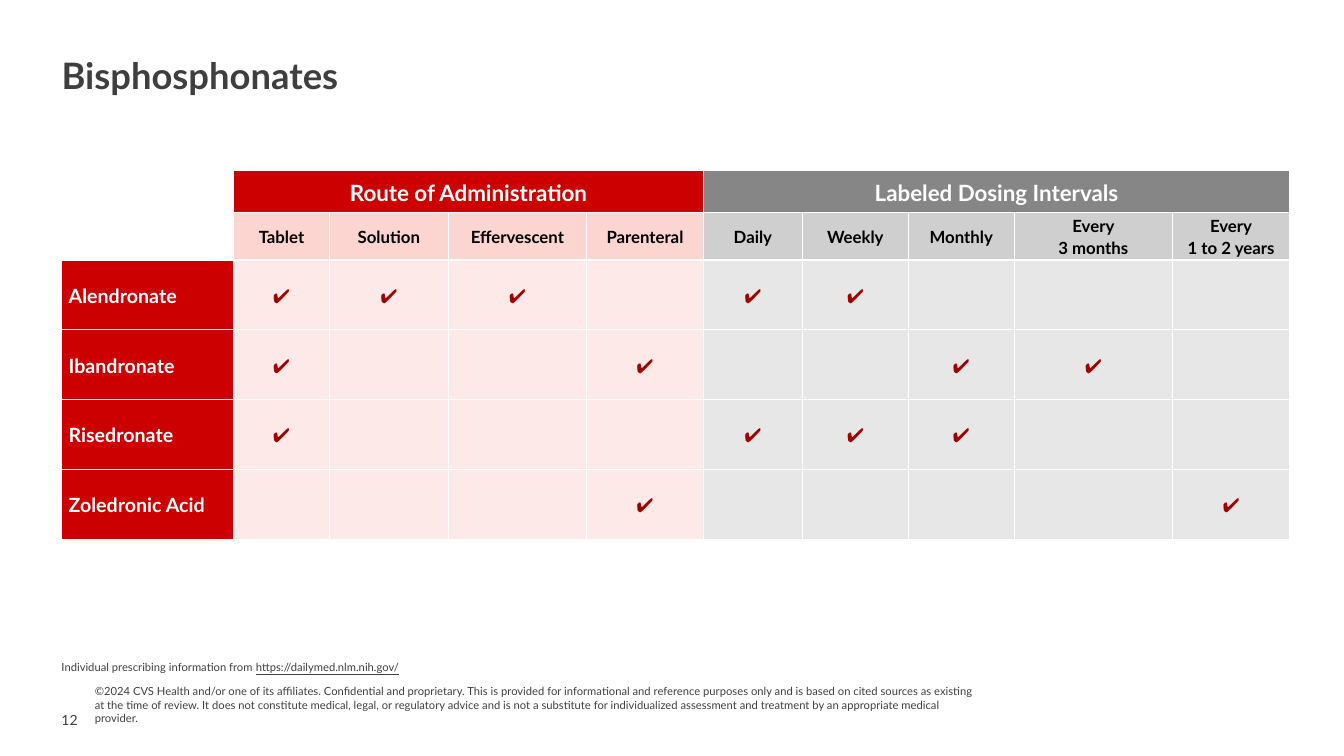
"""Build the bisphosphonates slide with its routes and dosing intervals table."""
from dataclasses import dataclass

import lxml.etree
import pptx
import pptx.dml.color
import pptx.enum.text
import pptx.oxml
import pptx.oxml.ns
import pptx.util

Cm = pptx.util.Cm
Pt = pptx.util.Pt
ANCHOR = pptx.enum.text.MSO_ANCHOR
ALIGN = pptx.enum.text.PP_ALIGN


@dataclass(frozen=True)
class Theme:
    font: str = "Lato"
    text: str = "3F3F3F"
    black: str = "000000"
    white: str = "FFFFFF"
    red: str = "CC0000"
    check: str = "9E0000"
    gray: str = "868686"
    route_head: str = "FCD5D1"
    route_cell: str = "FDEAE8"
    dosing_head: str = "CFCFCF"
    dosing_cell: str = "E7E7E7"
    title_size: int = 26
    group_size: int = 16
    drug_size: int = 14
    head_size: int = 12
    number_size: int = 10
    note_size: int = 8


ROUTES = ["Tablet", "Solution", "Effervescent", "Parenteral"]
INTERVALS = ["Daily", "Weekly", "Monthly", "Every\v3 months", "Every\v1 to 2 years"]
DRUGS = {
    "Alendronate": {"Tablet", "Solution", "Effervescent", "Daily", "Weekly"},
    "Ibandronate": {"Tablet", "Parenteral", "Monthly", "Every\v3 months"},
    "Risedronate": {"Tablet", "Daily", "Weekly", "Monthly"},
    "Zoledronic Acid": {"Parenteral", "Every\v1 to 2 years"},
}
COL_WIDTHS = [4.34, 2.41, 3, 3.48, 2.95, 2.49, 2.67, 2.67, 3.99, 2.95]
ROW_HEIGHTS = [1.07, 1.19] + [1.76] * len(DRUGS)
DISCLAIMER = (
    "©2024 CVS Health and/or one of its affiliates. Confidential and proprietary. "
    "This is provided for informational and reference purposes only and is based on "
    "cited sources as existing at the time of review. It does not constitute medical, "
    "legal, or regulatory advice and is not a substitute for individualized assessment "
    "and treatment by an appropriate medical provider."
)


class Deck:
    def __init__(self, theme):
        self.theme = theme
        self.prs = pptx.Presentation()
        self.prs.slide_width, self.prs.slide_height = Cm(33.87), Cm(19.05)
        self.s = self.prs.slides.add_slide(self.prs.slide_layouts[5])

    def style(self, p, size, color, bold=False):
        for r in p.runs:
            r.font.name = self.theme.font
            r.font.size = Pt(size)
            r.font.bold = bold
            r.font.color.rgb = pptx.dml.color.RGBColor.from_string(color)

    def frame(self, tf, anchor):
        tf.word_wrap = True
        tf.auto_size = pptx.enum.text.MSO_AUTO_SIZE.NONE
        tf.vertical_anchor = anchor
        tf.margin_left = tf.margin_right = tf.margin_top = tf.margin_bottom = 0

    def title(self, text, left, top, width, height):
        sp = self.s.shapes.title
        sp.left, sp.top, sp.width, sp.height = map(Cm, (left, top, width, height))
        self.frame(sp.text_frame, ANCHOR.TOP)
        sp.text_frame.text = text
        p = sp.text_frame.paragraphs[0]
        p.alignment = ALIGN.LEFT
        p.line_spacing = 0.9
        self.style(p, self.theme.title_size, self.theme.text, True)

    def text(self, text, left, top, width, height, size, anchor=ANCHOR.BOTTOM, address=""):
        sp = self.s.shapes.add_textbox(*map(Cm, (left, top, width, height)))
        self.frame(sp.text_frame, anchor)
        p = sp.text_frame.paragraphs[0]
        p.text = text
        if address:
            r = p.add_run()
            r.text = address
            r.font.underline = True
        self.style(p, size, self.theme.text)

    def table(self, left, top, widths, heights):
        gf = self.s.shapes.add_table(len(heights), len(widths), Cm(left), Cm(top),
                                     Cm(sum(widths)), Cm(sum(heights)))
        tbl = gf.table
        tbl.first_row = tbl.horz_banding = False
        for col, width in zip(tbl.columns, widths):
            col.width = Cm(width)
        for row, height in zip(tbl.rows, heights):
            row.height = Cm(height)
        for cell in tbl.iter_cells():
            self.borders(cell)
            cell.fill.background()
        return tbl

    def borders(self, cell):
        tc_pr = cell._tc.get_or_add_tcPr()
        qn = pptx.oxml.ns.qn
        for side in ("lnL", "lnR", "lnT", "lnB"):
            ln = lxml.etree.SubElement(tc_pr, qn(f"a:{side}"), w=str(Pt(1)))
            fill = lxml.etree.SubElement(ln, qn("a:solidFill"))
            lxml.etree.SubElement(fill, qn("a:srgbClr"), val=self.theme.white)

    def cell(self, cell, text, fill, size, color, bold=True, align=ALIGN.CENTER):
        cell.fill.solid()
        cell.fill.fore_color.rgb = pptx.dml.color.RGBColor.from_string(fill)
        cell.vertical_anchor = ANCHOR.MIDDLE
        cell.margin_left = cell.margin_right = Cm(0.18)
        cell.margin_top = cell.margin_bottom = 0
        p = cell.text_frame.paragraphs[0]
        p.text = text
        p.alignment = align
        p.line_spacing = 1.07
        self.style(p, size, color, bold)


def main():
    t = Theme()
    deck = Deck(t)
    deck.text("12", 1.55, 17.75, 1, 0.8, t.number_size, ANCHOR.MIDDLE)
    deck.text(DISCLAIMER, 2.39, 17.17, 22.35, 1.1, t.note_size)
    deck.title("Bisphosphonates", 1.55, 1.47, 26.85, 1.98)
    deck.text("Individual prescribing information from ", 1.55, 15.7, 22.86, 1.27,
              t.note_size, address="https://dailymed.nlm.nih.gov/")

    tbl = deck.table(1.55, 4.29, COL_WIDTHS, ROW_HEIGHTS)
    groups = [
        ("Route of Administration", ROUTES, t.red, t.route_head, t.route_cell),
        ("Labeled Dosing Intervals", INTERVALS, t.gray, t.dosing_head, t.dosing_cell),
    ]
    for i, drug in enumerate(DRUGS, 2):
        deck.cell(tbl.cell(i, 0), drug, t.red, t.drug_size, t.white, align=ALIGN.LEFT)
    first = 1
    for name, heads, group_fill, head_fill, cell_fill in groups:
        tbl.cell(0, first).merge(tbl.cell(0, first + len(heads) - 1))
        deck.cell(tbl.cell(0, first), name, group_fill, t.group_size, t.white)
        for j, head in enumerate(heads, first):
            deck.cell(tbl.cell(1, j), head, head_fill, t.head_size, t.black)
            for i, options in enumerate(DRUGS.values(), 2):
                mark = "✔" if head in options else ""
                deck.cell(tbl.cell(i, j), mark, cell_fill, t.drug_size, t.check, False)
        first += len(heads)
    deck.prs.save("out.pptx")


if __name__ == "__main__":
    main()
